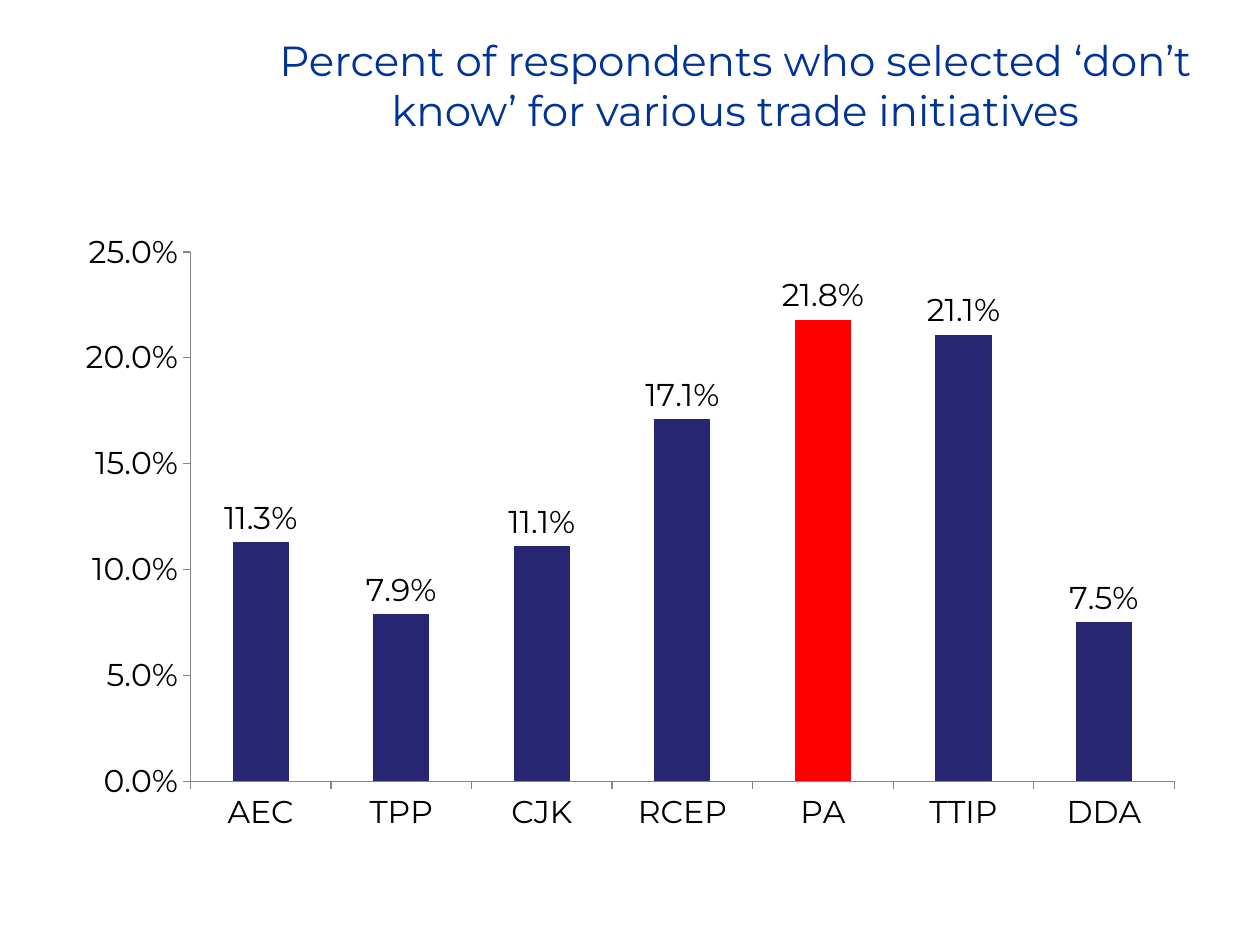
from pptx import Presentation
from pptx.chart.data import CategoryChartData as ChartData
from pptx.dml.color import RGBColor as RGB
from pptx.enum.chart import XL_CHART_TYPE as Kind, XL_LABEL_POSITION as Place
from pptx.enum.chart import XL_TICK_MARK as Tick
from pptx.enum.text import MSO_ANCHOR as Anchor, PP_ALIGN as Align
from pptx.util import Inches, Pt

FONT = "Montserrat"
COLORS = {"title": "003399", "text": "000000", "bar": "262673",
          "accent": "FF0000", "axis": "868686"}
RATES = {"AEC": 0.113, "TPP": 0.079, "CJK": 0.111, "RCEP": 0.171,
         "PA": 0.218, "TTIP": 0.211, "DDA": 0.075}


def style(font, size, color):
    font.name = FONT
    font.size = Pt(size)
    font.bold = False
    font.color.rgb = RGB.from_string(COLORS[color])


def paint(fill, color):
    fill.solid()
    fill.fore_color.rgb = RGB.from_string(COLORS[color])


prs = Presentation()
prs.slide_width, prs.slide_height = Inches(10), Inches(7.5)
slide = prs.slides.add_slide(prs.slide_layouts[5])

# Title
title = slide.shapes.title
title.left, title.top = Inches(1.75), Inches(0.17)
title.width, title.height = Inches(8.17), Inches(1)
frame = title.text_frame
frame.word_wrap = True
frame.vertical_anchor = Anchor.MIDDLE
para = frame.paragraphs[0]
para.alignment = Align.CENTER
run = para.add_run()
run.text = "Percent of respondents who selected ‘don’t know’ for various trade initiatives"
style(run.font, 24, "title")

# Chart
data = ChartData(number_format="0.0%")
data.categories = list(RATES)
data.add_series("Series 1", list(RATES.values()))
chart = slide.shapes.add_chart(Kind.COLUMN_CLUSTERED, Inches(0.5), Inches(1.75),
                               Inches(9), Inches(4.95), data).chart
chart.has_title = False
chart.has_legend = False
style(chart.font, 18, "text")

for axis in (chart.category_axis, chart.value_axis):
    axis.has_major_gridlines = False
    axis.major_tick_mark = Tick.OUTSIDE
    axis.minor_tick_mark = Tick.NONE
    axis.format.line.width = Pt(0.75)
    paint(axis.format.line.fill, "axis")

scale = chart.value_axis
scale.minimum_scale, scale.maximum_scale, scale.major_unit = 0, 0.25, 0.05
scale.tick_labels.number_format = "0.0%"
scale.tick_labels.number_format_is_linked = False

plot = chart.plots[0]
plot.gap_width = 150
plot.vary_by_categories = False
bars = plot.series[0]
bars.invert_if_negative = False
paint(bars.format.fill, "bar")
paint(bars.points[list(RATES).index("PA")].format.fill, "accent")

labels = bars.data_labels
labels.show_value = True
labels.number_format = "0.0%"
labels.number_format_is_linked = False
labels.position = Place.OUTSIDE_END
style(labels.font, 18, "text")

prs.save("out.pptx")
